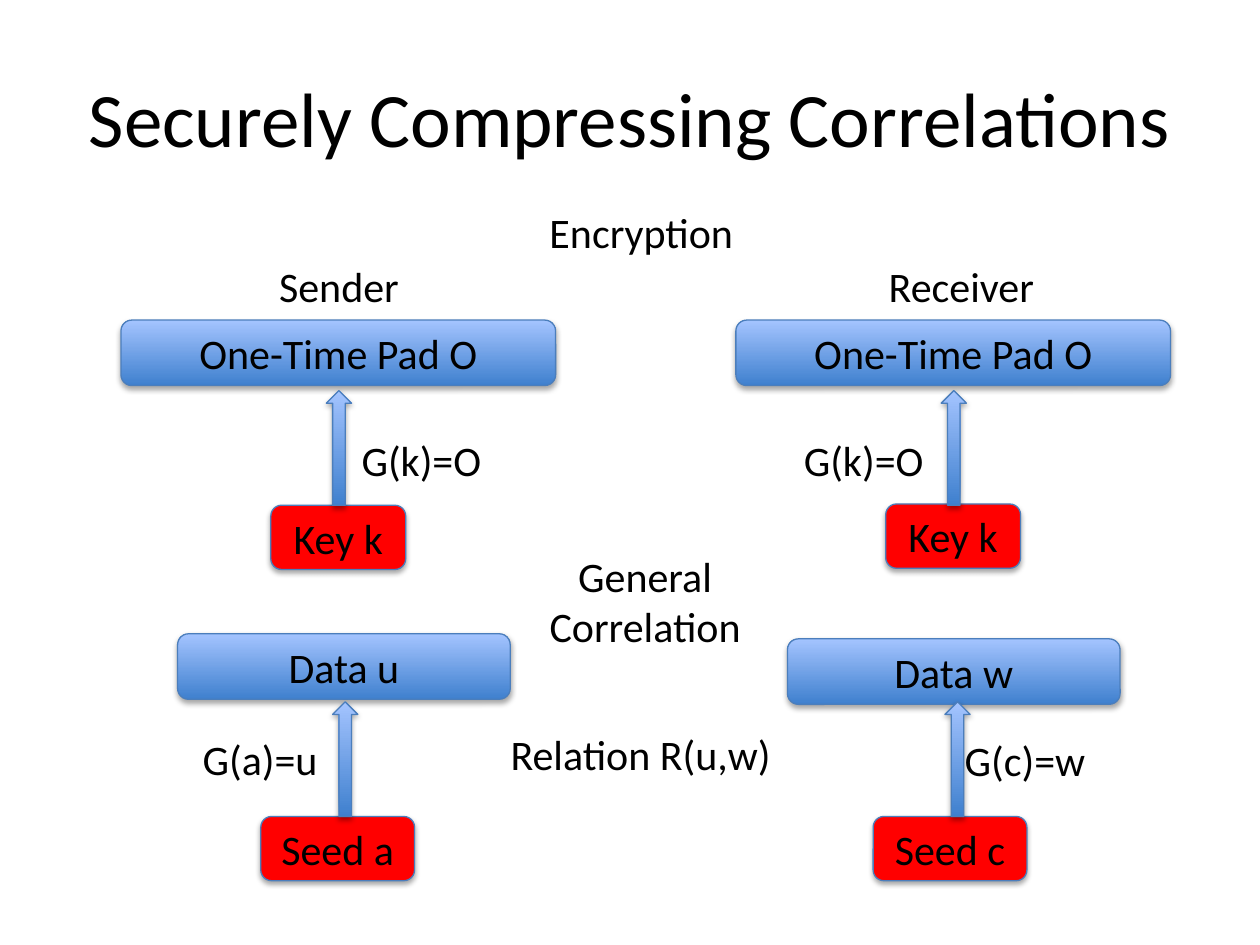
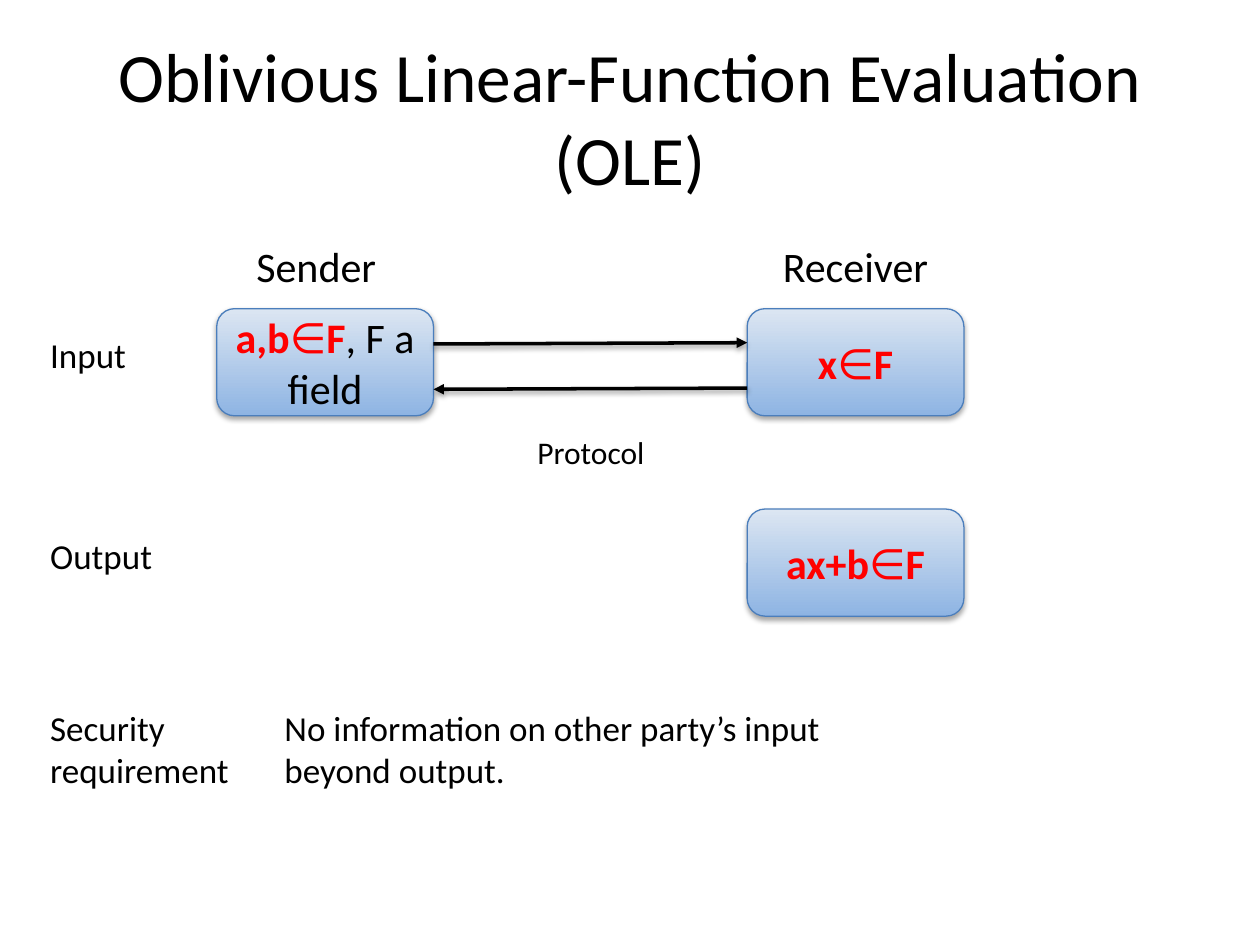
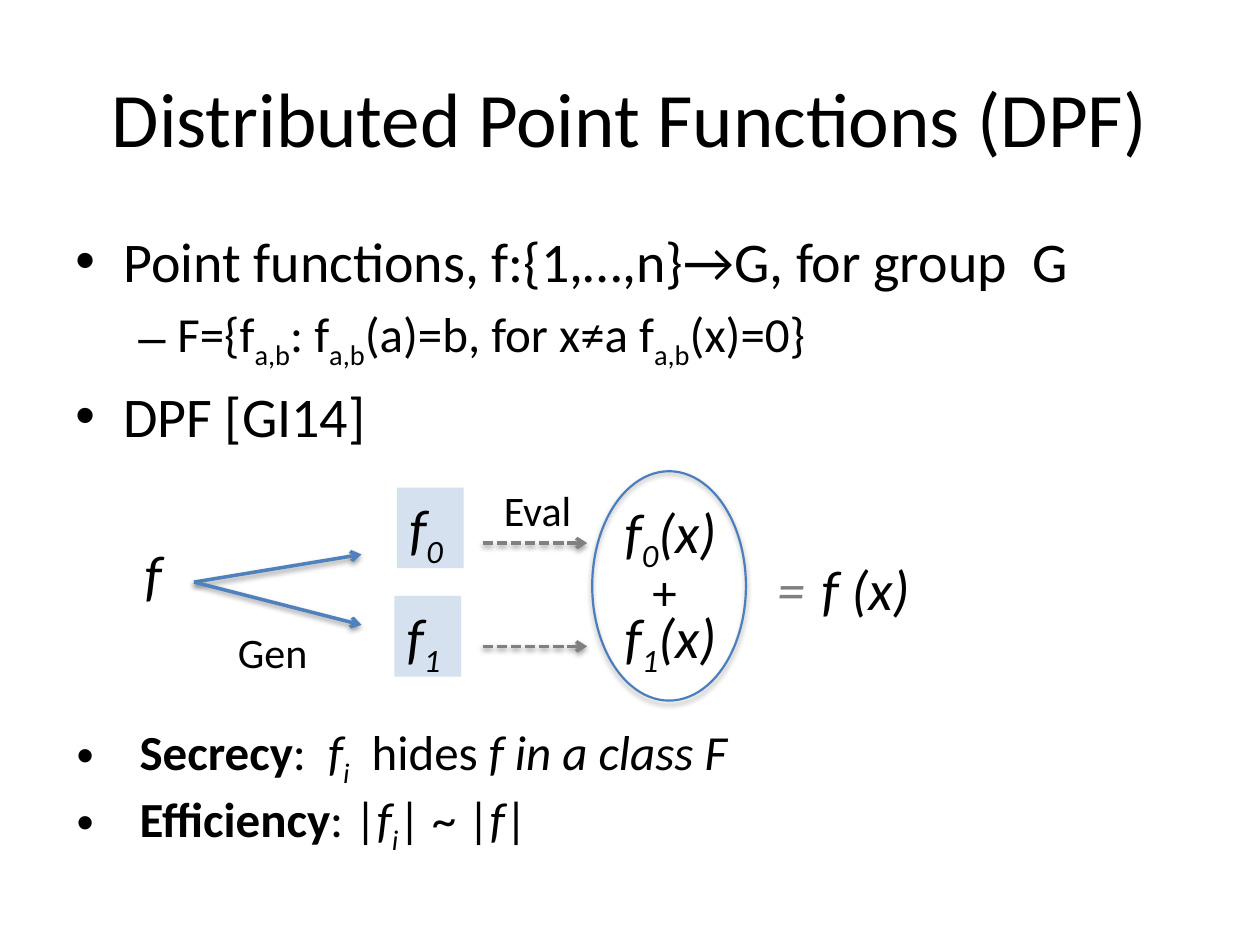
"""Build three slides on compressing correlations, OLE and distributed point functions."""
from dataclasses import dataclass

from lxml import etree
from pptx import Presentation
from pptx.dml.color import RGBColor
from pptx.enum.dml import MSO_LINE
from pptx.enum.shapes import MSO_CONNECTOR, MSO_SHAPE
from pptx.enum.text import MSO_ANCHOR, MSO_AUTO_SIZE, PP_ALIGN
from pptx.oxml.ns import qn
from pptx.util import Emu, Pt

PX = 9144
BLANK_LAYOUT = 6
ROUNDED, UP_ARROW = MSO_SHAPE.ROUNDED_RECTANGLE, MSO_SHAPE.UP_ARROW
RECTANGLE, OVAL = MSO_SHAPE.RECTANGLE, MSO_SHAPE.OVAL
STRAIGHT = MSO_CONNECTOR.STRAIGHT
LEFT, CENTER = PP_ALIGN.LEFT, PP_ALIGN.CENTER
TOP, MIDDLE = MSO_ANCHOR.TOP, MSO_ANCHOR.MIDDLE
FIT_TEXT, DASHED = MSO_AUTO_SIZE.SHAPE_TO_FIT_TEXT, MSO_LINE.SQUARE_DOT


@dataclass(frozen=True)
class Theme:
    """Colours, gradients and type sizes shared by the slides."""
    font: str = "Calibri"
    ink: str = "000000"
    red: str = "FF0000"
    gray: str = "808080"
    outline: str = "4B7EBC"
    blue: str = "4F81BD"
    share: str = "B9CDE5"
    strong: tuple = ("3F80CE", "A4C4FF")
    pale: tuple = ("8EB4E3", "DCE6F2")
    title: float = 44
    long_title: float = 39.6
    formula: float = 32
    detail: float = 28
    label: float = 24
    note: float = 20
    caption: float = 18
    thin_space: float = 10


THEME = Theme()


def px(*lengths):
    """Turn px lengths into EMU."""
    return [Emu(length * PX) for length in lengths]


def rgb(code):
    """Return the colour for a hex code."""
    return RGBColor.from_string(code)


def style_run(run, size, marks=""):
    """Format a run: b bold, i italic, _ subscript, r red, g gray, t thin."""
    font = run.font
    font.name = THEME.font
    font.size = Pt(THEME.thin_space if "t" in marks else size)
    font.bold, font.italic = "b" in marks, "i" in marks
    color = THEME.red if "r" in marks else THEME.gray if "g" in marks else THEME.ink
    font.color.rgb = rgb(color)
    if "_" in marks:
        run.font._element.set("baseline", "-25000")


def fill_paragraph(paragraph, content, size, align=LEFT):
    """Write plain text or a list of (text, marks) spans."""
    paragraph.alignment = align
    if isinstance(content, str):
        paragraph.text = content
        style_run(paragraph.runs[0], size)
        return
    for text, marks in content:
        run = paragraph.add_run()
        run.text = text
        style_run(run, size, marks)


def add_text(slide, content, box, size=THEME.label, align=CENTER, anchor=TOP, wrap=True):
    """Add a text box with one paragraph."""
    frame = slide.shapes.add_textbox(*px(*box)).text_frame
    frame.word_wrap, frame.vertical_anchor = wrap, anchor
    if not wrap:
        frame.auto_size = FIT_TEXT
    fill_paragraph(frame.paragraphs[0], content, size, align)


def add_formula(slide, content, box, size=THEME.formula):
    """Add an unwrapped, left-aligned formula."""
    add_text(slide, content, box, size, LEFT, wrap=False)


def add_title(slide, text, size=THEME.title):
    """Add the slide title."""
    add_text(slide, text, (50, 30, 900, 125), size, anchor=MIDDLE)


def add_bullets(slide, box, items):
    """Add bulleted paragraphs of (content, size, bullet, margin, hang, gap)."""
    frame = slide.shapes.add_textbox(*px(*box)).text_frame
    frame.word_wrap = True
    for index, (content, size, bullet, margin, hang, gap) in enumerate(items):
        paragraph = frame.add_paragraph() if index else frame.paragraphs[0]
        fill_paragraph(paragraph, content, size)
        paragraph.space_before = Pt(gap)
        properties = paragraph._p.get_or_add_pPr()
        properties.set("marL", str(margin * PX))
        properties.set("indent", str(-hang * PX))
        etree.SubElement(properties, qn("a:buFont"), typeface="Arial")
        etree.SubElement(properties, qn("a:buChar"), char=bullet)


def cast_shadow(item, opacity=35, distance=1.8):
    """Give a shape or connector a soft shadow below it."""
    effects = etree.SubElement(item._element.spPr, qn("a:effectLst"))
    shadow = etree.SubElement(
        effects, qn("a:outerShdw"), blurRad=str(Pt(3.1)), dist=str(Pt(distance)),
        dir="5400000", rotWithShape="0")
    color = etree.SubElement(shadow, qn("a:srgbClr"), val=THEME.ink)
    etree.SubElement(color, qn("a:alpha"), val=str(opacity * 1000))


def add_block(slide, kind, box, fill, content="", line_width=0.75):
    """Add an outlined, shadowed shape with a plain, gradient or no fill."""
    block = slide.shapes.add_shape(kind, *px(*box))
    if fill is None:
        block.fill.background()
    elif isinstance(fill, tuple):
        block.fill.gradient()
        block.fill.gradient_angle = 90
        for stop, color in zip(block.fill.gradient_stops, fill):
            stop.color.rgb = rgb(color)
    else:
        block.fill.solid()
        block.fill.fore_color.rgb = rgb(fill)
    block.line.color.rgb = rgb(THEME.outline)
    block.line.width = Pt(line_width)
    cast_shadow(block)
    if content:
        block.text_frame.word_wrap = True
        block.text_frame.vertical_anchor = MIDDLE
        fill_paragraph(block.text_frame.paragraphs[0], content, THEME.label, CENTER)


def add_share(slide, index, box):
    """Add a translucent tile with one function share."""
    tile = slide.shapes.add_shape(RECTANGLE, *px(*box))
    tile.shadow.inherit = False
    tile.line.fill.background()
    tile.fill.solid()
    tile.fill.fore_color.rgb = rgb(THEME.share)
    color = tile._element.spPr.find(qn("a:solidFill"))[0]
    etree.SubElement(color, qn("a:alpha"), val="60000")
    frame = tile.text_frame
    frame.word_wrap, frame.vertical_anchor = False, TOP
    fill_paragraph(frame.paragraphs[0], [("f", "i"), (index, "i_")], THEME.formula)


def add_arrow(slide, start, end, color, head, dash=None):
    """Add a shadowed straight arrow."""
    arrow = slide.shapes.add_connector(STRAIGHT, *px(*start, *end))
    arrow.line.color.rgb = rgb(color)
    arrow.line.width = Pt(2)
    if dash:
        arrow.line.dash_style = dash
    etree.SubElement(arrow.line._get_or_add_ln(), qn("a:tailEnd"), type=head)
    cast_shadow(arrow, 38, 1.6)


def add_expansion(slide, long_text, long_box, seed, seed_box, arrow_at, formula, formula_at):
    """Add a short seed that expands upwards into a long string."""
    add_block(slide, ROUNDED, (*long_box, 52), THEME.strong, long_text)
    add_block(slide, ROUNDED, (*seed_box, 51), THEME.red, seed)
    add_block(slide, UP_ARROW, (*arrow_at, 20, 91), THEME.strong)
    add_text(slide, formula, (*formula_at, 213, 50))


def left_top_width(left, top, width):
    """Group the position and width of a block."""
    return left, top, width


def build_correlations(slide):
    """Build the slide on compressing correlations."""
    add_title(slide, "Securely Compressing Correlations")
    for text, box in (
        ("Encryption", (415, 159, 188, 50)),
        ("Sender", (175, 202, 188, 50)),
        ("Receiver", (669, 202, 188, 50)),
        ("General Correlation", (418, 432, 188, 91)),
        ("Relation R(u,w)", (393, 573, 231, 50)),
    ):
        add_text(slide, text, box)
    for expansion in (
        ("One-Time Pad O", (96, 254, 345), "Key k", (215, 401, 107),
         (259, 310), "G(k)=O", (228, 340)),
        ("One-Time Pad O", (584, 254, 345), "Key k", (703, 400, 107),
         (747, 310), "G(k)=O", (579, 340)),
        ("Data u", (141, 503, 264), "Seed a", (207, 648, 122),
         (264, 557), "G(a)=u", (100, 577)),
        ("Data w", (625, 507, 264), "Seed c", (693, 648, 122),
         (750, 557), "G(c)=w", (707, 578)),
    ):
        add_expansion(slide, *expansion)


def build_ole(slide):
    """Build the slide on oblivious linear-function evaluation."""
    add_title(slide, "Oblivious Linear-Function Evaluation (OLE)", THEME.long_title)
    sender, receiver, width, height = 172, 593, 172, 85
    for role, left in (("Sender", 129), ("Receiver", 557)):
        add_text(slide, role, (left, 186, 244, 50))
    for value, rest, left, top in (
        ("a,b", [(", F a field", "")], sender, 245),
        ("x", [], receiver, 245),
        ("ax+b", [], receiver, 404),
    ):
        member = [(value, "rb"), ("∈", "r"), ("F", "rb")]
        add_block(slide, ROUNDED, (left, top, width, height), THEME.pale, member + rest)
    sender_edge = sender + width
    add_arrow(slide, (sender_edge, 273), (receiver, 272), THEME.ink, "triangle")
    add_arrow(slide, (receiver, 308), (sender_edge, 309), THEME.ink, "triangle")
    add_text(slide, "Protocol", (412, 339, 114, 40), THEME.caption)
    for note, box in (
        ("Input", (30, 260, 89, 44)),
        ("Output", (30, 419, 106, 44)),
        ("Security requirement", (30, 556, 166, 77)),
        ("No information on other party’s input beyond output.", (216, 556, 516, 77)),
    ):
        add_text(slide, note, box, THEME.note, LEFT)


def build_dpf(slide):
    """Build the slide on distributed point functions."""
    add_title(slide, "Distributed Point Functions (DPF)")
    index = ("a,b", "_")
    family = [("F={f", ""), index, (": f", ""), index,
              ("(a)=b, for x≠a f", ""), index, ("(x)=0}", "")]
    add_bullets(slide, (50, 175, 900, 495), (
        ("Point functions, f:{1,…,n}→G, for group  G", THEME.formula, "•", 38, 38, 6.4),
        (family, THEME.detail, "–", 81, 31, 5.6),
        ("DPF [GI14]", THEME.formula, "•", 38, 38, 6.4),
    ))
    add_formula(slide, "+", (508, 441, 43, 57), THEME.detail)
    add_formula(slide, [("= ", "gi"), (" ", "git"), ("f (x)", "i")], (607, 435, 135, 64))
    add_block(slide, OVAL, (470, 374, 122, 182), None, line_width=1.25)
    add_formula(slide, [("f", "i")], (105, 423, 47, 64))
    share = [("f", "i"), ("i", "i_")]
    secrecy = [("Secrecy", "b"), (":  ", ""), *share, ("  hides ", ""),
               ("f in a class F", "i")]
    efficiency = [("Efficiency", "b"), (": |", ""), *share, ("| ~ |", ""),
                  ("f", "i"), ("|", "")]
    add_bullets(slide, (51, 568, 787, 104), [
        (claim, THEME.detail, "•", 50, 50, 0) for claim in (secrecy, efficiency)])
    for number, tile_at, gen_end, value_top, eval_y in (
        ("0", (315, 387), (287, 440), 390, 431),
        ("1", (313, 473), (287, 496), 473, 513),
    ):
        add_share(slide, number, (*tile_at, 53, 64))
        add_arrow(slide, (154, 462), gen_end, THEME.blue, "arrow")
        add_formula(slide, [("f", "i"), (number, "i_"), ("(x)", "i")],
                    (486, value_top, 100, 64))
        add_arrow(slide, (383, eval_y), (466, eval_y), THEME.gray, "arrow", DASHED)
    add_text(slide, "Gen", (179, 492, 81, 50), align=LEFT)
    add_text(slide, "Eval", (390, 380, 144, 50), align=LEFT)


def main():
    """Build and save the presentation."""
    deck = Presentation()
    deck.slide_width, deck.slide_height = px(1000, 750)
    for build in (build_correlations, build_ole, build_dpf):
        build(deck.slides.add_slide(deck.slide_layouts[BLANK_LAYOUT]))
    deck.save("out.pptx")


if __name__ == "__main__":
    main()
